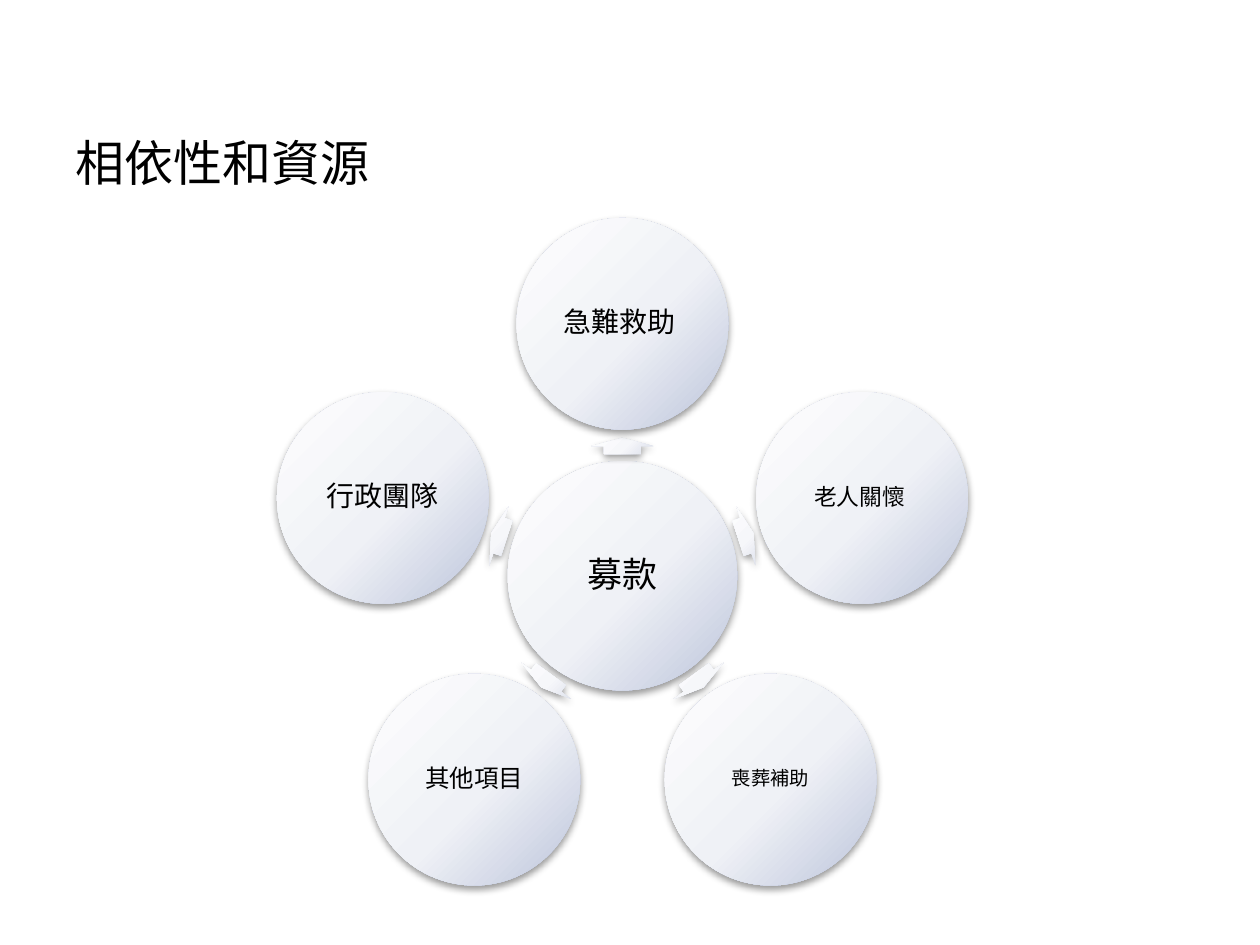
from dataclasses import dataclass
from math import cos, radians, sin

from lxml.etree import SubElement
from pptx import Presentation
from pptx.dml.color import RGBColor
from pptx.enum.shapes import MSO_SHAPE
from pptx.enum.text import MSO_ANCHOR, PP_ALIGN
from pptx.oxml.ns import qn
from pptx.util import Inches, Pt


@dataclass(frozen=True)
class Theme:
    font: str = "TeX Gyre Schola"
    ink: str = "000000"
    circle_stops: tuple = ((0, "FEFEFE"), (55, "EFF1F6"), (100, "BCC4DB"))
    arrow_stops: tuple = ((0, "FEFEFF"), (55, "F6F7FA"), (100, "DADEEA"))
    title_size: int = 28
    hub_size: int = 20


def write_text(box, text, *, font, size, color, align=PP_ALIGN.LEFT,
               anchor=MSO_ANCHOR.TOP, inset=None, line_spacing=None):
    """Fill a shape or placeholder with one formatted paragraph."""
    frame = box.text_frame
    frame.word_wrap = True
    frame.vertical_anchor = anchor
    if inset is not None:
        frame.margin_left = frame.margin_right = Inches(inset)
        frame.margin_top = frame.margin_bottom = Inches(inset)
    para = frame.paragraphs[0]
    para.alignment = align
    para.line_spacing = line_spacing
    span = para.add_run()
    span.text = text
    span.font.name = font
    span.font.size = Pt(size)
    span.font.color.rgb = RGBColor.from_string(color)


def add_element(parent, tag, **attributes):
    return SubElement(parent, qn(tag), {key: str(value) for key, value in attributes.items()})


class SlideBuilder:
    def __init__(self, page, theme):
        self.page = page
        self.theme = theme

    def title(self, text, left, top, width, height):
        box = self.page.shapes.title
        box.left, box.top = Inches(left), Inches(top)
        box.width, box.height = Inches(width), Inches(height)
        write_text(box, text, font=self.theme.font, size=self.theme.title_size,
                   color=self.theme.ink)

    def soft_shape(self, kind, center, width, height, stops):
        """Add a borderless shape with a radial gradient and a soft shadow."""
        x, y = center
        shape = self.page.shapes.add_shape(
            kind, Inches(x - width / 2), Inches(y - height / 2),
            Inches(width), Inches(height))
        shape.line.fill.background()

        # Radial gradient, centred above and to the left of the shape
        shape.fill.gradient()
        properties = shape._element.spPr
        gradient = properties.find(qn("a:gradFill"))
        for child in list(gradient):
            gradient.remove(child)
        stop_list = add_element(gradient, "a:gsLst")
        for position, color in stops:
            stop = add_element(stop_list, "a:gs", pos=position * 1000)
            add_element(stop, "a:srgbClr", val=color)
        radial = add_element(gradient, "a:path", path="circle")
        add_element(radial, "a:fillToRect", l=-40000, t=-90000, r=140000, b=190000)

        # Shadow falling straight down
        shape.shadow.inherit = False
        shadow = add_element(
            properties.find(qn("a:effectLst")), "a:outerShdw", blurRad=Pt(4.1),
            dist=Pt(2), dir=5400000, algn="ctr", rotWithShape=0)
        shade = add_element(shadow, "a:srgbClr", val="000000")
        add_element(shade, "a:alpha", val=40000)
        return shape

    def circle(self, text, center, diameter, size, inset=0.02):
        shape = self.soft_shape(MSO_SHAPE.OVAL, center, diameter, diameter,
                                self.theme.circle_stops)
        write_text(shape, text, font=self.theme.font, size=size, color=self.theme.ink,
                   align=PP_ALIGN.CENTER, anchor=MSO_ANCHOR.MIDDLE, inset=inset,
                   line_spacing=0.9)

    def arrow(self, center, angle):
        shape = self.soft_shape(MSO_SHAPE.RIGHT_ARROW, center, 0.13, 0.49,
                                self.theme.arrow_stops)
        shape.adjustments[0], shape.adjustments[1] = 0.6, 0.5
        shape.rotation = angle % 360


def main():
    deck = Presentation()
    deck.slide_width, deck.slide_height = Inches(10), Inches(7.5)
    theme = Theme()
    builder = SlideBuilder(deck.slides.add_slide(deck.slide_layouts[5]), theme)

    builder.title("相依性和資源", 0.5, 1, 9, 1)

    # Hub of the radial diagram
    hub = (4.94, 4.57)
    builder.circle("募款", hub, 1.82, theme.hub_size, inset=0.03)

    # Arrows and outer circles, clockwise from the top
    topics = [("急難救助 ", 16), ("老人關懷 ", 13), ("喪葬補助", 11),
              ("其他項目", 14), ("行政團隊", 16)]

    def around_hub(radius, angle):
        turn = radians(angle)
        return hub[0] + radius * cos(turn), hub[1] + radius * sin(turn)

    for index, (text, size) in enumerate(topics):
        angle = -90 + index * 360 / len(topics)
        builder.arrow(around_hub(1.03, angle), angle)
        builder.circle(text, around_hub(2, angle), 1.68, size)

    deck.save("out.pptx")


if __name__ == "__main__":
    main()
